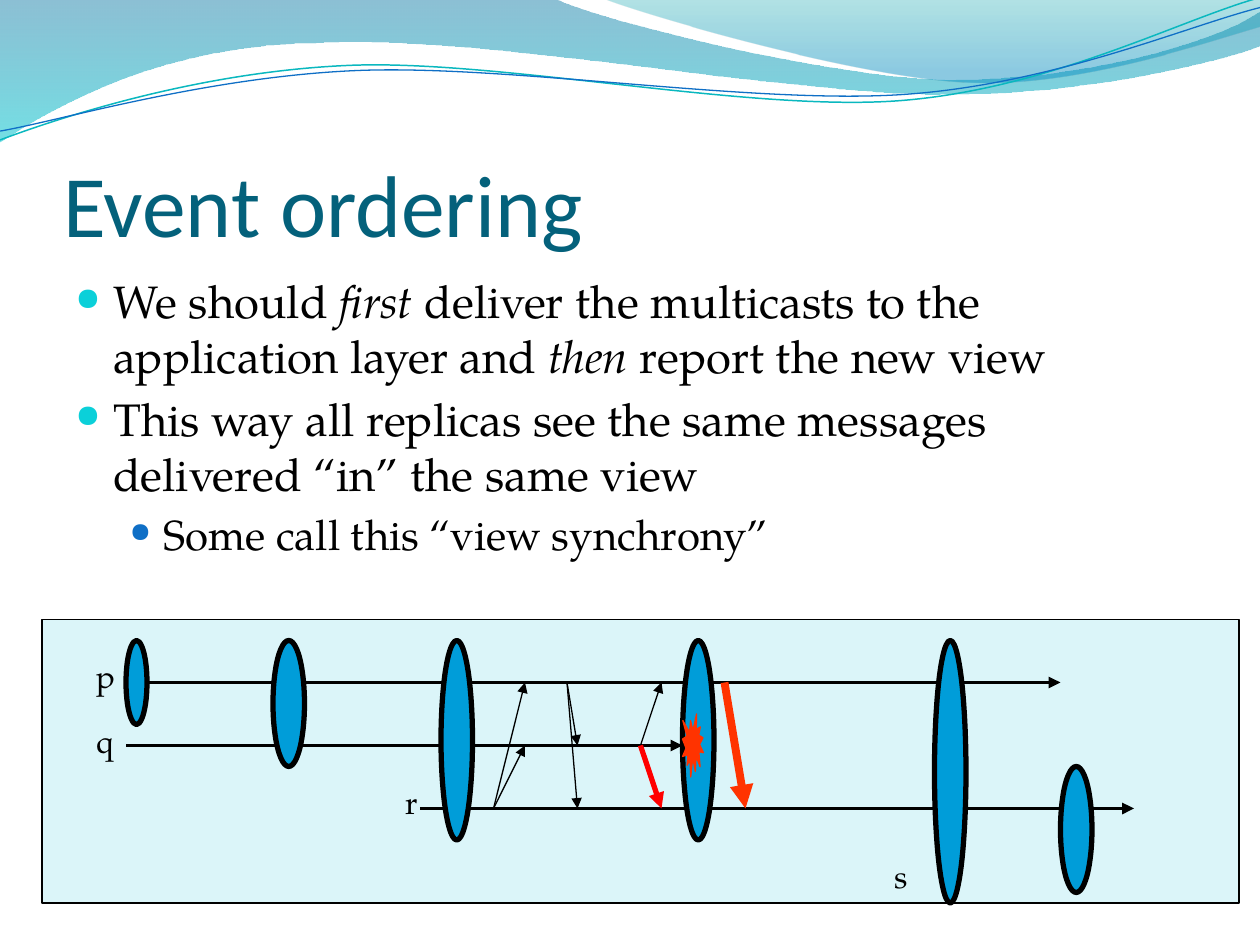
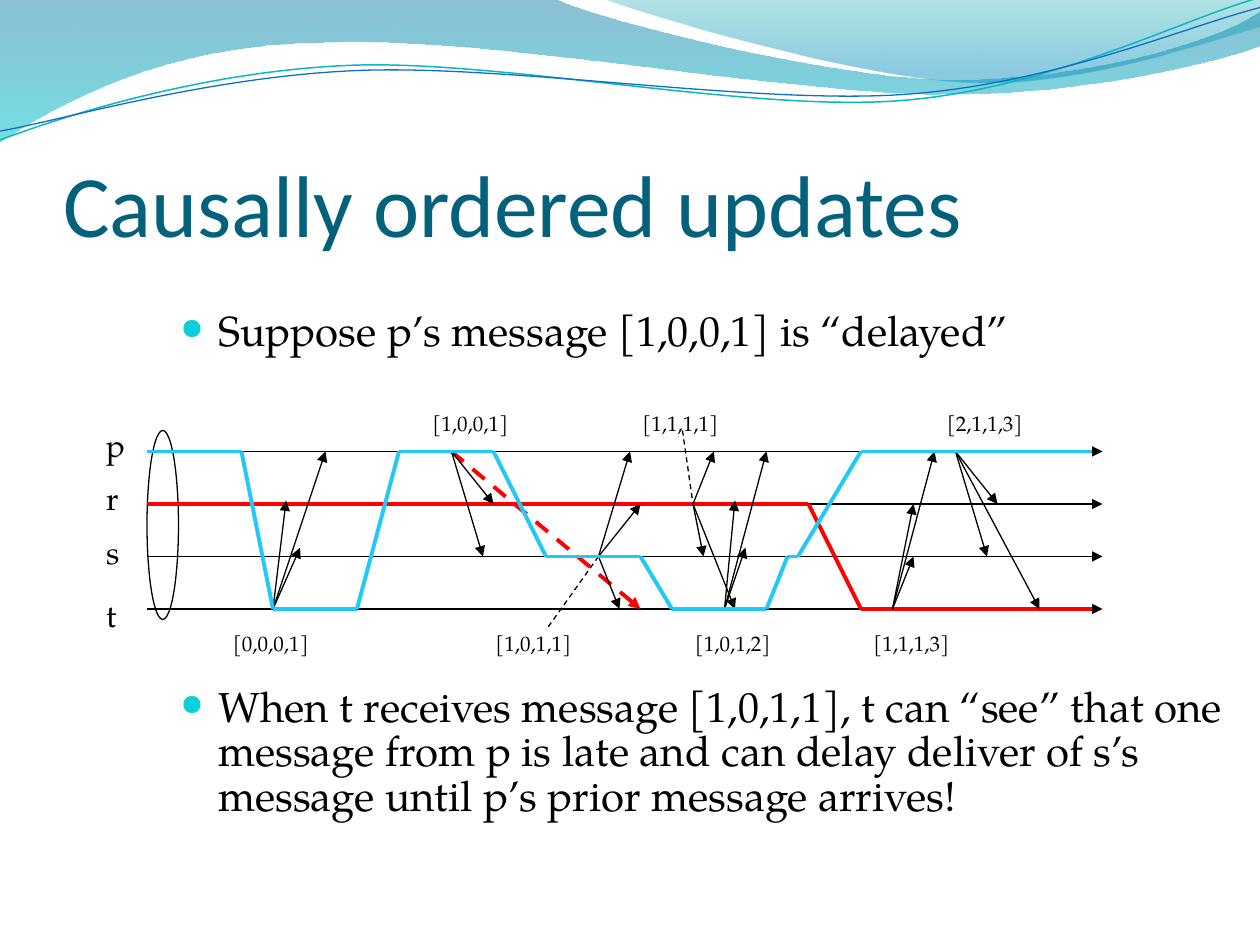
from itertools import pairwise

from lxml import etree
from pptx import Presentation
from pptx.dml.color import RGBColor
from pptx.enum import dml, shapes, text
from pptx.oxml.ns import qn
from pptx.util import Pt

BLACK = RGBColor(0x00, 0x00, 0x00)
TITLE_BLUE = RGBColor(0x04, 0x61, 0x7B)
BULLET_TEAL = RGBColor(0x0B, 0xD0, 0xD9)
BLUE = RGBColor(0x0F, 0x6F, 0xC6)
WAVE_TEAL = RGBColor(0x0A, 0xB8, 0xBF)
PANEL = RGBColor(0xDB, 0xF5, 0xF9)
VIEW_BLUE = RGBColor(0x00, 0x9D, 0xD9)
ORANGE = RGBColor(0xFF, 0x33, 0x00)
RED = RGBColor(0xFF, 0x00, 0x00)
CYAN = RGBColor(0x20, 0xC9, 0xF8)
TITLE_FONT = "Calibri"
BODY_FONT = "TeX Gyre Pagella"

# Bullet styles: colour, left margin, hanging indent, size in percent
FIRST_LEVEL = (BULLET_TEAL, 21.6, 21.6, 70)
SECOND_LEVEL = (BLUE, 50.4, 19.44, 65)


def add_text(slide, left, top, width, height, items, line_spacing=None, gap=5):
    """Add a text box; items are (text, size, bullet), with *italic* marked in the text."""
    box = slide.shapes.add_textbox(Pt(left), Pt(top), Pt(width), Pt(height))
    frame = box.text_frame
    frame.word_wrap = True
    for number, (words, size, bullet) in enumerate(items):
        paragraph = frame.add_paragraph() if number else frame.paragraphs[0]
        if bullet:
            color, margin, hanging, percent = bullet
            properties = paragraph._p.get_or_add_pPr()
            properties.set("marL", str(Pt(margin)))
            properties.set("indent", str(-Pt(hanging)))
            bullet_color = etree.SubElement(properties, qn("a:buClr"))
            etree.SubElement(bullet_color, qn("a:srgbClr"), val=str(color))
            etree.SubElement(properties, qn("a:buSzPct"), val=str(percent * 1000))
            etree.SubElement(properties, qn("a:buChar"), char="●")
            paragraph.space_before = Pt(gap if number else 5)
        if line_spacing:
            paragraph.line_spacing = line_spacing
        paragraph.font.name = BODY_FONT
        paragraph.font.size = Pt(size)
        paragraph.font.color.rgb = BLACK
        for index, part in enumerate(words.split("*")):
            run = paragraph.add_run()
            run.text = part
            if index % 2:
                run.font.italic = True


def add_line(slide, start, end, color=BLACK, width=0.75, arrow=True, dashed=False):
    line = slide.shapes.add_connector(
        shapes.MSO_CONNECTOR.STRAIGHT, *(Pt(value) for value in (*start, *end)))
    line.line.color.rgb = color
    line.line.width = Pt(width)
    if dashed:
        line.line.dash_style = dml.MSO_LINE.DASH
    if arrow:
        outline = line.element.find(".//" + qn("a:ln"))
        etree.SubElement(outline, qn("a:tailEnd"), type="triangle")
    etree.SubElement(line.element.spPr, qn("a:effectLst"))


presentation = Presentation()
presentation.slide_width = Pt(720)
presentation.slide_height = Pt(540)
layout = presentation.slide_layouts[5]
for placeholder in list(layout.placeholders):
    if placeholder.placeholder_format.type != shapes.PP_PLACEHOLDER.TITLE:
        placeholder.element.getparent().remove(placeholder.element)

# Slides and their titles
slides = []
for title_text in ("Event ordering", "Causally ordered updates"):
    slide = presentation.slides.add_slide(layout)
    slides.append(slide)
    title = slide.shapes.title
    title.left, title.top, title.width, title.height = Pt(36), Pt(55.5), Pt(648), Pt(90)
    frame = title.text_frame
    frame.text = title_text
    frame.auto_size = text.MSO_AUTO_SIZE.NONE
    frame.vertical_anchor = text.MSO_ANCHOR.BOTTOM
    frame.margin_left = frame.margin_right = frame.margin_bottom = 0
    frame.margin_top = Pt(3.6)
    paragraph = frame.paragraphs[0]
    paragraph.alignment = text.PP_ALIGN.LEFT
    paragraph.font.name = TITLE_FONT
    paragraph.font.size = Pt(50)
    paragraph.font.color.rgb = TITLE_BLUE
ordering, causal = slides

# Wave header, kept on the layout: start, then line ends (x, y) or curves (three points)
# Gradient stops: position, colour, opacity in percent
waves = [
    ([(0, -0.7), (317, -0.7), (343, 12, 478, 45.4, 546, 45.4),
      (614, 45.4, 690, 26.6, 720, 6.5), (720.7, 25.9),
      (708, 31.7, 626, 54.7, 537, 54), (448, 54, 275, 20.2, 185, 24.5),
      (92.9, 25.2, 33.1, 59.8, -0.7, 81.4)],
     [(0, RGBColor(0x00, 0x74, 0xA1), 45), (1, RGBColor(0x00, 0xC6, 0xCF), 55)], None),
    ([(345, -0.7), (366, 8, 491, 44.6, 554, 46.8),
      (616, 49.7, 692, 23, 720, 15.1), (720, 0)],
     [(0, RGBColor(0x00, 0xA1, 0xA9), 30), (0.8, RGBColor(0x00, 0x8B, 0xBF), 45)], None),
    ([(0, 80), (34.6, 67, 113.8, 41, 199.4, 37.4),
      (284.4, 33.8, 427, 64, 513.4, 57.6), (600, 51.1, 675.4, 10.8, 720, -1.4)],
     None, (WAVE_TEAL, 0.85)),
    ([(0, 74.9), (33.8, 69.1, 118, 43.9, 203.8, 40.3),
      (290, 36.7, 430, 59.8, 516, 54), (602, 48.2, 677.5, 15.1, 720, 4.3)],
     None, (BLUE, 0.75)),
]
wave_shapes = []
for outline, stops, stroke in waves:
    points = [(Pt(x), Pt(y)) for segment in outline
              for x, y in zip(segment[::2], segment[1::2])]
    builder = ordering.shapes.build_freeform(*points[0])
    builder.add_line_segments(points[1:], close=stops is not None)
    wave = builder.convert_to_shape()
    wave.shadow.inherit = False
    # Join each three line ends that belong to a curve
    line_ends = iter(wave.element.findall(".//" + qn("a:lnTo")))
    for segment in outline[1:]:
        curve = next(line_ends)
        if len(segment) == 6:
            curve.tag = qn("a:cubicBezTo")
            for line_end in (next(line_ends), next(line_ends)):
                curve.append(line_end[0])
                line_end.getparent().remove(line_end)
    if stops:
        wave.fill.gradient()
        wave.fill.gradient_angle = 270
        for stop, (position, color, opacity) in zip(wave.fill.gradient_stops, stops):
            stop.position = position
            stop.color.rgb = color
        fills = wave.element.findall(".//" + qn("a:srgbClr"))
        for fill, (position, color, opacity) in zip(fills, stops):
            for child in list(fill):
                fill.remove(child)
            etree.SubElement(fill, qn("a:alpha"), val=str(opacity * 1000))
        wave.line.fill.background()
    else:
        wave.fill.background()
        wave.line.color.rgb = stroke[0]
        wave.line.width = Pt(stroke[1])
    wave_shapes.append(wave)
for wave in wave_shapes:
    layout.shapes.element.append(wave.element)

# Slide 1: event ordering
add_text(ordering, 36, 152.6, 648, 345.6, [
    ("We should *first *deliver the multicasts to the application layer and "
     "*then *report the new view", 26, FIRST_LEVEL),
    ("This way all replicas see the same messages delivered “in” the same view",
     26, FIRST_LEVEL),
    ("Some call this “view synchrony”", 24, SECOND_LEVEL),
])

panel = ordering.shapes.add_shape(
    shapes.MSO_SHAPE.RECTANGLE, Pt(24), Pt(354), Pt(684), Pt(162))
panel.shadow.inherit = False
panel.fill.solid()
panel.fill.fore_color.rgb = PANEL
panel.line.color.rgb = BLACK
panel.line.width = Pt(0.75)

P, Q, R = (390 + 36 * row for row in range(3))
for y, start, end in ((P, 72, 606), (Q, 72, 390), (R, 240, 648)):
    add_line(ordering, (start, y), (end, y), width=2.25)
for name, left, top in (("p", 48, 372), ("q", 48, 409), ("r", 224.5, 444), ("s", 504, 486)):
    add_text(ordering, left, top, 24, 29, [(name, 18, None)])

OVAL, BURST = shapes.MSO_SHAPE.OVAL, shapes.MSO_SHAPE.EXPLOSION1
for kind, left, top, width, height, fill, edge, weight in (
        (OVAL, 72, 366, 12, 48, VIEW_BLUE, BLACK, 3),
        (OVAL, 156, 366, 18, 72, VIEW_BLUE, BLACK, 3),
        (OVAL, 252, 366, 18, 114, VIEW_BLUE, BLACK, 3),
        (OVAL, 390, 366, 18, 114, VIEW_BLUE, BLACK, 3),
        (BURST, 390, 408, 12, 36, ORANGE, ORANGE, 0.75),
        (OVAL, 534, 366, 18, 150, VIEW_BLUE, BLACK, 3),
        (OVAL, 606, 438, 18, 72, VIEW_BLUE, BLACK, 3)):
    shape = ordering.shapes.add_shape(kind, Pt(left), Pt(top), Pt(width), Pt(height))
    shape.shadow.inherit = False
    shape.fill.solid()
    shape.fill.fore_color.rgb = fill
    shape.line.color.rgb = edge
    shape.line.width = Pt(weight)

for start, ends in (((282, R), [(300, Q), (300, P)]),
                    ((324, P), [(330, Q), (330, R)]),
                    ((366, Q), [(378, P)])):
    for end in ends:
        add_line(ordering, start, end)
add_line(ordering, (414, P), (426, R), ORANGE, 4.5)
add_line(ordering, (366, Q), (378, R), RED, 3)

# Slide 2: causally ordered updates; the diagram stands in the gap between the paragraphs
add_text(causal, 96, 174.3, 612, 324, [
    ("Suppose p’s message [1,0,0,1] is “delayed”", 24, FIRST_LEVEL),
    ("When t receives message [1,0,1,1], t can “see” that one message from p is late "
     "and can delay deliver of s’s message until p’s prior message arrives!",
     24, FIRST_LEVEL),
], line_spacing=0.88, gap=189.5)

P, R, S, T = (258 + 30 * row for row in range(4))
for name, y, top, width in (("p", P, 240, 1), ("r", R, 270, 0.75),
                            ("s", S, 301, 0.75), ("t", T, 337, 0.75)):
    add_line(causal, (84, y), (630, y), width=width)
    add_text(causal, 54, top, 24, 29, [(name, 18, None)])

group = causal.shapes.add_shape(OVAL, Pt(84), Pt(246), Pt(18), Pt(108))
group.shadow.inherit = False
group.fill.background()
group.line.color.rgb = BLACK
group.line.width = Pt(0.75)

add_line(causal, (258, P), (366, T), RED, 2.25, dashed=True)
for start, end in pairwise([(84, R), (462, R), (492, T), (624, T)]):
    add_line(causal, start, end, RED, 2.25, arrow=False)

multicasts = [
    ((156, T), [(171.5, 313), (186, P), (163.5, 286)]),
    ((258, P), [(282, R), (276, S)]),
    ((342, S), [(360, P), (354, T), (366, R)]),
    ((396, R), [(402, S), (420, T), (408, P)]),
    ((414, T), [(426, 313), (438, P), (420, 286)]),
    ((510, T), [(522, S), (522, R), (534, P)]),
    ((546, P), [(570, R), (594, T), (564, S)]),
]
for sender, receivers in multicasts:
    for receiver in receivers:
        add_line(causal, sender, receiver)

ABOVE, BELOW = 231, 357
for stamp, left, top in (("[0,0,0,1]", 126, BELOW), ("[1,0,0,1]", 240, ABOVE),
                         ("[1,0,1,1]", 276, BELOW), ("[1,1,1,1]", 360, ABOVE),
                         ("[1,0,1,2]", 390, BELOW), ("[1,1,1,3]", 492, BELOW),
                         ("[2,1,1,3]", 534, ABOVE)):
    add_text(causal, left, top, 90, 22, [(stamp, 12, None)])
for start, end in (((342, S), (312, 360)), ((390, 246), (396, R))):
    add_line(causal, start, end, arrow=False, dashed=True)

causal_path = [(84, P), (138, P), (156, T), (204, T), (228, P), (282, P), (312, S),
               (366, S), (384, T), (438, T), (450, S), (456, S), (492, P), (624, P)]
for start, end in pairwise(causal_path):
    add_line(causal, start, end, CYAN, 2.25, arrow=False)

presentation.save("out.pptx")
